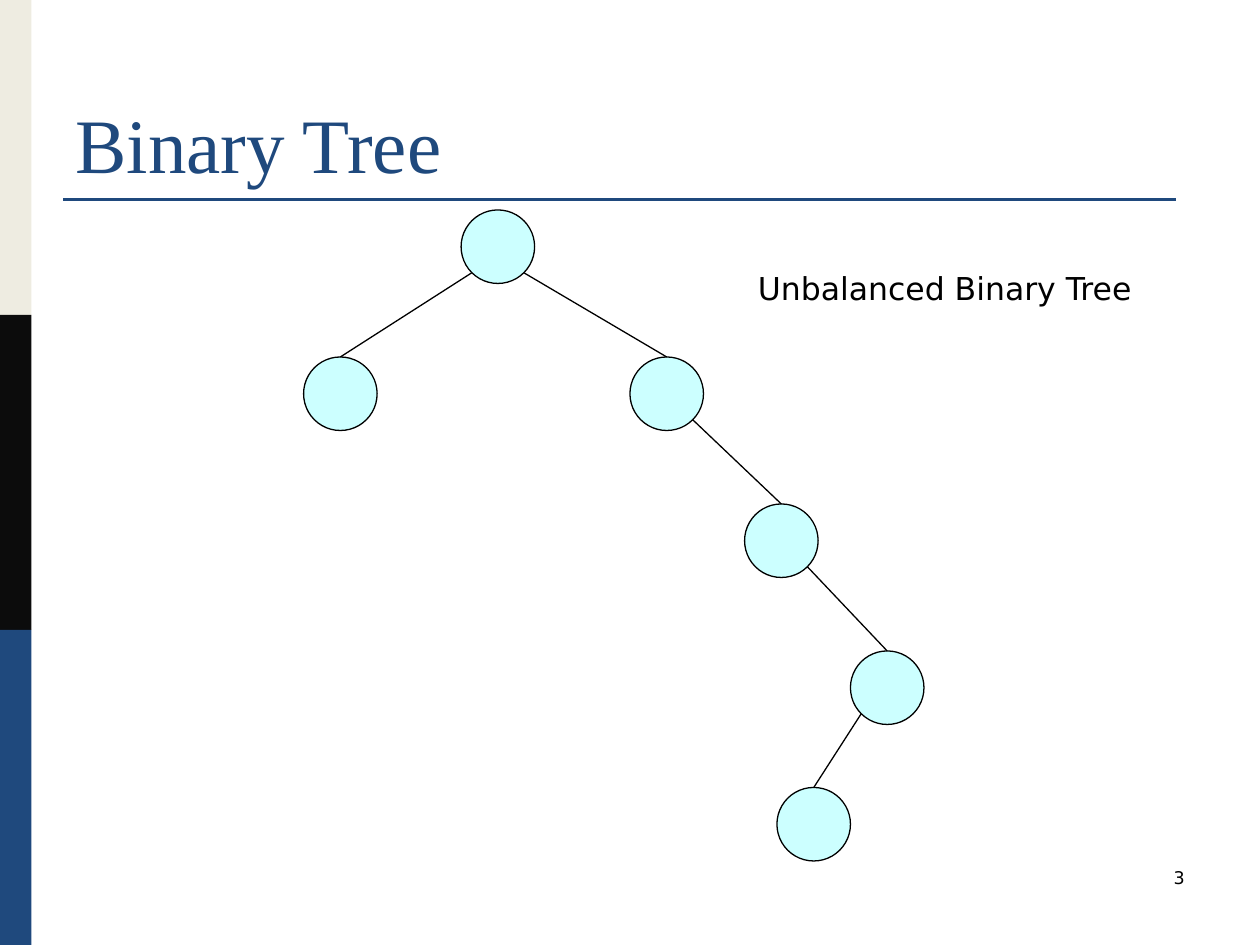
import math

import pptx
import pptx.dml.color
import pptx.enum.shapes
import pptx.enum.text
import pptx.oxml.ns
import pptx.util
from lxml import etree

Pt = pptx.util.Pt
RGBColor = pptx.dml.color.RGBColor
Align = pptx.enum.text.PP_ALIGN
Anchor = pptx.enum.text.MSO_ANCHOR
Shape = pptx.enum.shapes.MSO_SHAPE

NAVY = RGBColor(0x1F, 0x49, 0x7D)
CREAM = RGBColor(0xEE, 0xEC, 0xE1)
CHARCOAL = RGBColor(0x0C, 0x0C, 0x0C)
BLACK = RGBColor(0, 0, 0)
AQUA = RGBColor(0xCC, 0xFF, 0xFF)

NODE_SIZE = 42
NODES = {
    "root": (263.5, 120),
    "left": (173.5, 204),
    "right": (360, 204),
    "third": (425.5, 288),
    "fourth": (486, 372),
    "leaf": (444, 450),
}
EDGES = [
    ("root", "left"),
    ("root", "right"),
    ("right", "third"),
    ("third", "fourth"),
    ("fourth", "leaf"),
]


def add_filled_shape(page, kind, box, color):
    shape = page.shapes.add_shape(kind, *map(Pt, box))
    shape.shadow.inherit = False
    shape.fill.solid()
    shape.fill.fore_color.rgb = color
    shape.line.fill.background()
    return shape


def add_line(page, start, end, color, width):
    line = page.shapes.add_connector(
        pptx.enum.shapes.MSO_CONNECTOR.STRAIGHT, *map(Pt, (*start, *end)))
    line.line.color.rgb = color
    line.line.width = Pt(width)
    etree.SubElement(line._element.spPr, pptx.oxml.ns.qn("a:effectLst"))
    return line


def format_text(shape, text, font_name, size, color, align=Align.LEFT, anchor=Anchor.TOP):
    frame = shape.text_frame
    frame.word_wrap = True
    frame.vertical_anchor = anchor
    para = frame.paragraphs[0]
    para.text = text
    para.alignment = align
    para.font.name = font_name
    para.font.size = Pt(size)
    para.font.color.rgb = color


def add_side_bands(page, box):
    left, top, width, height = box
    colors = (CREAM, CHARCOAL, NAVY)
    band_height = height / len(colors)
    for index, color in enumerate(colors):
        band = (left, top + index * band_height, width, band_height)
        add_filled_shape(page, Shape.RECTANGLE, band, color)


def add_heading(page, box):
    left, top, width, height = box
    title = page.shapes.title
    title.left, title.top, title.width, title.height = map(Pt, box)
    format_text(title, "Binary Tree", "Times New Roman", 44, NAVY, anchor=Anchor.BOTTOM)
    rule_top = top + height + 2.4
    add_line(page, (left, rule_top), (left + width - 12, rule_top), NAVY, 2)


def add_tree(page, box):
    left, top = box[:2]
    circles = {}
    for name, (node_left, node_top) in NODES.items():
        circle = add_filled_shape(
            page, Shape.OVAL,
            (left + node_left - 173.5, top + node_top - 120, NODE_SIZE, NODE_SIZE), AQUA)
        circle.line.color.rgb = BLACK
        circle.line.width = Pt(0.75)
        circles[name] = circle

    radius = NODE_SIZE / 2
    reach = radius * math.sqrt(0.5)
    for parent_name, child_name in EDGES:
        parent, child = circles[parent_name], circles[child_name]
        side = 1 if child.left > parent.left else -1
        start = (parent.left.pt + radius + side * reach, parent.top.pt + radius + reach)
        end = (child.left.pt + radius, child.top.pt)
        edge = add_line(page, start, end, BLACK, 0.75)
        edge.end_connect(child, 0)


def add_label(page, box, text, size, align=Align.LEFT):
    label = page.shapes.add_textbox(*map(Pt, box))
    format_text(label, text, "DejaVu Sans", size, BLACK, align)


def main():
    deck = pptx.Presentation()
    deck.slide_width, deck.slide_height = Pt(720), Pt(540)
    page = deck.slides.add_slide(deck.slide_layouts[5])
    add_side_bands(page, (0, 0, 18, 540))
    add_heading(page, (36, 21.6, 648, 90))
    add_tree(page, (173.5, 120, 354.5, 372))
    add_label(page, (426, 150, 234, 29), "Unbalanced Binary Tree", 18)
    add_label(page, (516, 492, 168, 36), "3", 10, Align.RIGHT)
    deck.save("out.pptx")


if __name__ == "__main__":
    main()
